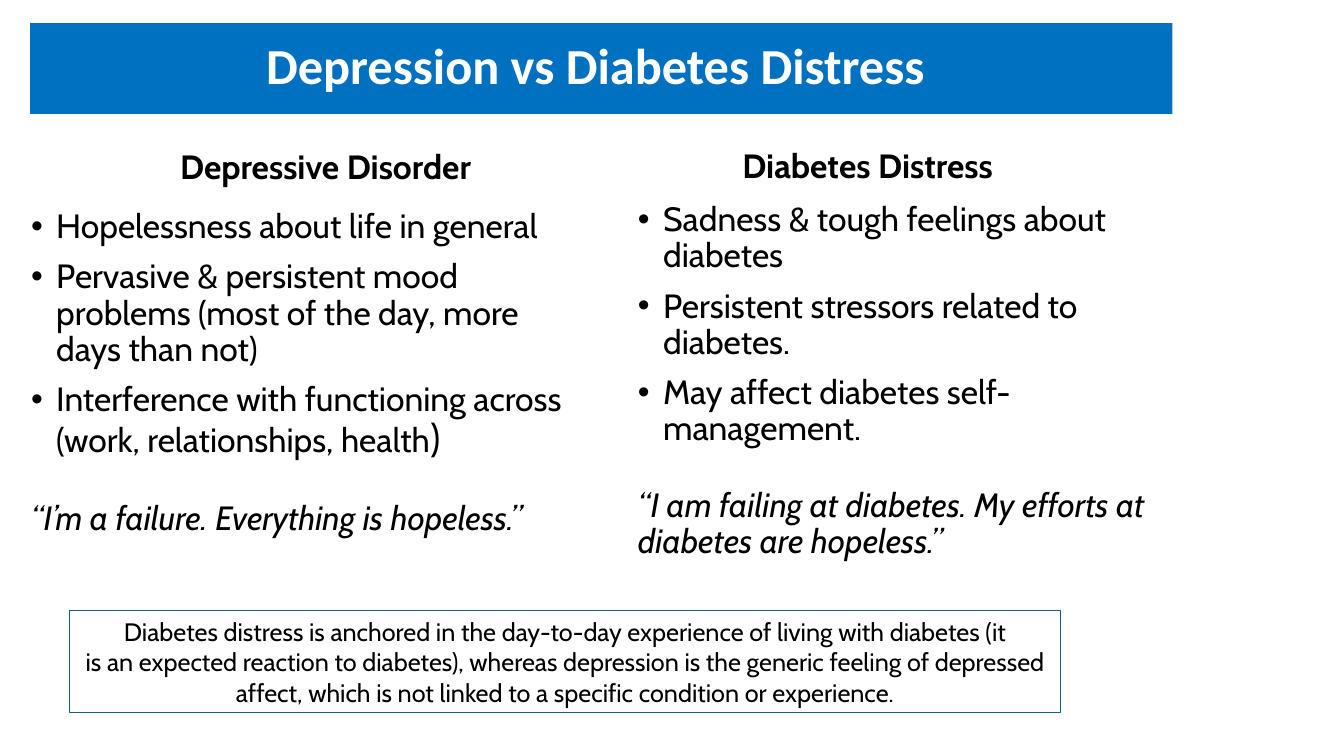
from pptx import Presentation
from pptx.dml.color import RGBColor
from pptx.enum.shapes import MSO_SHAPE
from pptx.enum.text import MSO_ANCHOR, PP_ALIGN
from pptx.oxml.xmlchemy import OxmlElement
from pptx.util import Pt

BLUE, TEAL, WHITE, BLACK = "0070C0", "156082", "FFFFFF", "000000"
BULLET_INDENT = 18
QUOTE_GAP = 28.5


def color(hex_string):
    return RGBColor.from_string(hex_string)


def add_rect(slide, box, fill=None, line=None):
    rect = slide.shapes.add_shape(MSO_SHAPE.RECTANGLE, *map(Pt, box))
    rect.shadow.inherit = False
    if fill:
        rect.fill.solid()
        rect.fill.fore_color.rgb = color(fill)
    else:
        rect.fill.background()
    if line:
        rect.line.color.rgb = color(line)
        rect.line.width = Pt(0.75)
    else:
        rect.line.fill.background()
    return start_text(rect, MSO_ANCHOR.MIDDLE)


def add_text_box(slide, box, anchor=MSO_ANCHOR.TOP):
    return start_text(slide.shapes.add_textbox(*map(Pt, box)), anchor)


def start_text(holder, anchor):
    frame = holder.text_frame
    frame.word_wrap = True
    frame.vertical_anchor = anchor
    return frame


def add_paragraph(frame, runs, align=PP_ALIGN.LEFT, before=10, spacing=0.9,
                  font="Cabin", fill=BLACK, bold=False, italic=False):
    """Append a paragraph made of (text, size) runs, using the empty first one if free."""
    first = frame.paragraphs[0]
    paragraph = frame.add_paragraph() if first.runs else first
    paragraph.alignment = align
    paragraph.space_before = Pt(before)
    paragraph.line_spacing = spacing
    for text, size in runs:
        run = paragraph.add_run()
        run.text = text
        run.font.name = font
        run.font.size = Pt(size)
        run.font.bold = bold
        run.font.italic = italic
        run.font.color.rgb = color(fill)
    return paragraph


def add_bullet(paragraph):
    properties = paragraph._p.get_or_add_pPr()
    properties.set("marL", str(Pt(BULLET_INDENT)))
    properties.set("indent", str(-Pt(BULLET_INDENT)))
    bullet_font = OxmlElement("a:buFont")
    bullet_font.set("typeface", "Arial")
    bullet = OxmlElement("a:buChar")
    bullet.set("char", "•")
    properties.extend([bullet_font, bullet])


def add_banner(slide, box, title):
    frame = add_rect(slide, box, fill=BLUE)
    add_paragraph(frame, [(title, 36)], PP_ALIGN.CENTER, before=0,
                  font="Calibri", fill=WHITE, bold=True)


def add_column(slide, heading_box, body_box, heading, points, quote):
    heading_frame = add_text_box(slide, heading_box, MSO_ANCHOR.BOTTOM)
    add_paragraph(heading_frame, [(heading, 24)], PP_ALIGN.CENTER, bold=True)
    body = add_text_box(slide, body_box)
    for runs in points:
        add_bullet(add_paragraph(body, runs))
    add_paragraph(body, [(quote, 24)], before=QUOTE_GAP, italic=True)


def add_summary(slide, box, lines):
    frame = add_rect(slide, box, line=TEAL)
    for line in lines:
        add_paragraph(frame, [(line, 18)], PP_ALIGN.CENTER, before=0, spacing=1.0)


def main():
    deck = Presentation()
    deck.slide_width, deck.slide_height = Pt(960), Pt(540)
    slide = deck.slides.add_slide(deck.slide_layouts[6])

    add_banner(slide, (21.6, 16.6, 815.8, 64.8), "Depression vs Diabetes Distress ")
    add_column(
        slide, (29.5, 100.1, 406.1, 36.7), (15.1, 146.2, 406.1, 275),
        "Depressive Disorder",
        [[("Hopelessness about life in general", 24)],
         [("Pervasive & persistent mood problems (most of the day, more days than not)", 24)],
         [("Interference with functioning across (work, relationships, health", 24), (")", 28)]],
        "“I’m a failure. Everything is hopeless.”")
    add_column(
        slide, (418.3, 99.4, 408.2, 36.7), (448.6, 141.1, 388.8, 285.8),
        "Diabetes Distress ",
        [[("Sadness & tough feelings about diabetes", 24)],
         [("Persistent stressors related to diabetes.", 24)],
         [("May affect diabetes self-management.", 24)]],
        "“I am failing at diabetes. My efforts at diabetes are hopeless.”")
    add_summary(slide, (49.7, 436.3, 707.8, 72.7), [
        "Diabetes distress is anchored in the day-to-day experience of living with diabetes (it",
        "is an expected reaction to diabetes), whereas depression is the generic feeling of "
        "depressed affect, which is not linked to a specific condition or experience."])

    deck.save("out.pptx")


if __name__ == "__main__":
    main()
